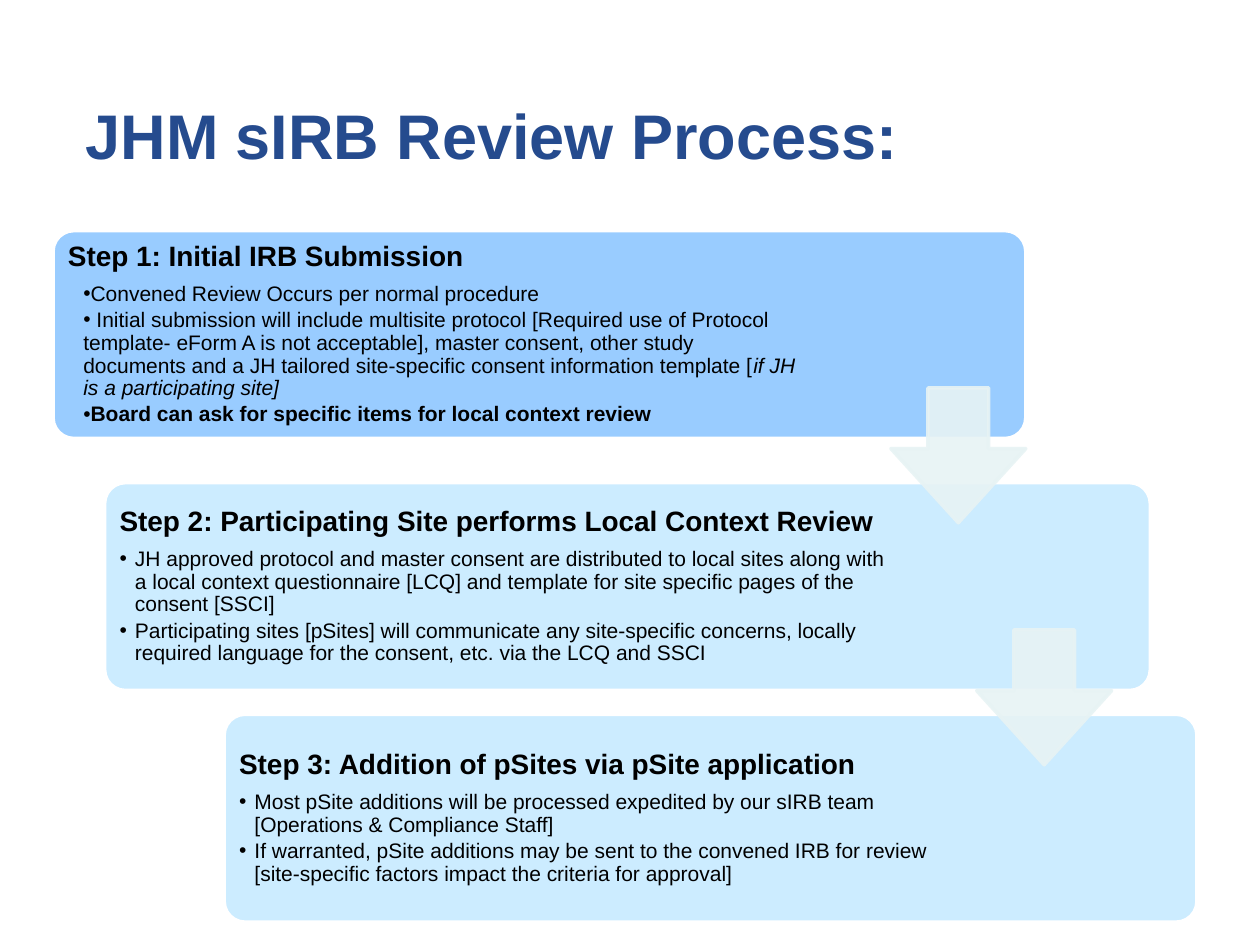
"""Build the three-step review process slide."""
from dataclasses import dataclass

from lxml import etree
from pptx import Presentation
from pptx.dml.color import RGBColor
from pptx.enum.shapes import MSO_SHAPE
from pptx.enum.text import MSO_ANCHOR, MSO_AUTO_SIZE, PP_ALIGN
from pptx.oxml.ns import qn
from pptx.util import Cm, Pt

CARD = MSO_SHAPE.ROUNDED_RECTANGLE
ARROW = MSO_SHAPE.DOWN_ARROW
TOP, MIDDLE = MSO_ANCHOR.TOP, MSO_ANCHOR.MIDDLE
NO_FIT = MSO_AUTO_SIZE.NONE
LEFT = PP_ALIGN.LEFT


@dataclass(frozen=True)
class Theme:
    font: str = "Arial"
    navy: str = "254B8E"
    ink: str = "000000"
    edge: str = "FFFFFF"
    strong: str = "99CCFF"
    pale: str = "CCECFF"
    mist: str = "E7F3F4"
    title: int = 36
    head: int = 16
    body: int = 12


@dataclass(frozen=True)
class Point:
    text: str
    tail: str = ""
    bold: bool = False


@dataclass(frozen=True)
class Step:
    left: float
    top: float
    width: float
    wrap: float
    fill: str
    head: str
    points: tuple[Point, ...]
    hang: float = -0.31


THEME = Theme()
CARD_TALL, PAD, INSET, INDENT = 4.19, 0.12, 0.18, 0.31
ARROW_SIZE = 2.72
ARROWS = ((17.96, 7.82), (19.69, 12.7))
STEPS = (
    Step(1.07, 4.65, 19.61, 15.09, THEME.strong, "Step 1: Initial IRB Submission", (
        Point("Convened Review Occurs per normal procedure"),
        Point(" Initial submission will include multisite protocol [Required use of "
              "Protocol template- eForm A is not acceptable], master consent, other "
              "study documents and a JH tailored site-specific consent information "
              "template [", tail="if JH is a participating site]"),
        Point("Board can ask for specific items for local context review", bold=True),
    ), hang=0),
    Step(2.11, 9.73, 21.08, 16.05, THEME.pale,
         "Step 2: Participating Site performs Local Context Review", (
             Point("JH approved protocol and master consent are distributed to local "
                   "sites along with a local context questionnaire [LCQ] and template "
                   "for site specific pages of the consent [SSCI]"),
             Point("Participating sites [pSites] will communicate any site-specific "
                   "concerns, locally required language for the consent, etc. via the "
                   "LCQ and SSCI"),
         )),
    Step(4.52, 14.4, 19.61, 14.91, THEME.pale,
         "Step 3: Addition of pSites via pSite application", (
             Point("Most pSite additions will be processed expedited by our sIRB team "
                   "[Operations & Compliance Staff]"),
             Point("If warranted, pSite additions may be sent to the convened IRB for "
                   "review [site-specific factors impact the criteria for approval]"),
         )),
)


def place(shape, left: float, top: float, width: float, height: float) -> None:
    shape.left, shape.top = Cm(left), Cm(top)
    shape.width, shape.height = Cm(width), Cm(height)


def style(run, size: int, color: str, bold: bool, italic: bool = False) -> None:
    font = run.font
    font.name, font.size = THEME.font, Pt(size)
    font.bold, font.italic = bold, italic
    font.color.rgb = RGBColor.from_string(color)


def space(para, after: int, margin: float, hang: float, mark: str = "") -> None:
    para.alignment, para.line_spacing = LEFT, 0.9
    para.space_before, para.space_after = Pt(0), Pt(after)
    props = para._p.get_or_add_pPr()
    props.set("marL", str(Cm(margin)))
    props.set("indent", str(Cm(hang)))
    bullet = etree.SubElement(props, qn("a:buChar" if mark else "a:buNone"))
    if mark:
        bullet.set("char", mark)


def draw(slide, kind, box: tuple, fill: str, line: str, adjust: tuple):
    shape = slide.shapes.add_shape(kind, *map(Cm, box))
    shape.shadow.inherit = False
    shape.fill.solid()
    shape.fill.fore_color.rgb = RGBColor.from_string(fill)
    shape.line.color.rgb = RGBColor.from_string(line)
    shape.line.width = Pt(2)
    for spot, value in enumerate(adjust):
        shape.adjustments[spot] = value
    return shape


def draw_step(slide, body, step: Step) -> None:
    draw(slide, CARD, (step.left, step.top, step.width, CARD_TALL),
         step.fill, THEME.edge, (0.1,))
    slide.shapes._spTree.append(body._element)
    place(body, step.left + PAD, step.top + PAD, step.wrap, CARD_TALL - 2 * PAD)
    frame = body.text_frame
    frame.word_wrap, frame.auto_size = True, NO_FIT
    frame.vertical_anchor = MIDDLE
    frame.margin_left = frame.margin_right = Cm(INSET)
    frame.margin_top = frame.margin_bottom = Cm(INSET)
    frame.text = step.head
    head = frame.paragraphs[0]
    space(head, 6, 0, 0)
    style(head.runs[0], THEME.head, THEME.ink, True)
    for point in step.points:
        para = frame.add_paragraph()
        para.text, para.level = point.text, 1
        space(para, 2, INDENT, step.hang, "•")
        style(para.runs[0], THEME.body, THEME.ink, point.bold)
        if point.tail:
            run = para.add_run()
            run.text = point.tail
            style(run, THEME.body, THEME.ink, False, True)


def draw_arrow(slide, left: float, top: float) -> None:
    arrow = draw(slide, ARROW, (left, top, ARROW_SIZE, ARROW_SIZE),
                 THEME.mist, THEME.mist, (0.45, 0.55))
    for color in arrow._element.spPr.iter(qn("a:srgbClr")):
        etree.SubElement(color, qn("a:alpha")).set("val", "90000")


def draw_title(title) -> None:
    place(title, 1.47, 1.7, 22.35, 2.57)
    frame = title.text_frame
    frame.text = "JHM sIRB Review Process:"
    frame.word_wrap, frame.auto_size = True, NO_FIT
    frame.vertical_anchor, frame.margin_top = TOP, Cm(0.25)
    para = frame.paragraphs[0]
    para.alignment = LEFT
    style(para.runs[0], THEME.title, THEME.navy, True)


def main() -> None:
    deck = Presentation()
    deck.slide_width, deck.slide_height = Cm(25.4), Cm(19.05)
    slide = deck.slides.add_slide(deck.slide_layouts[4])
    draw_title(slide.shapes.title)
    bodies = [item for item in slide.placeholders if item.placeholder_format.idx > 0]
    for body, step in zip(bodies, STEPS):
        draw_step(slide, body, step)
    for spare in bodies[len(STEPS):]:
        slide.shapes._spTree.remove(spare._element)
    for left, top in ARROWS:
        draw_arrow(slide, left, top)
    deck.save("out.pptx")


if __name__ == "__main__":
    main()
